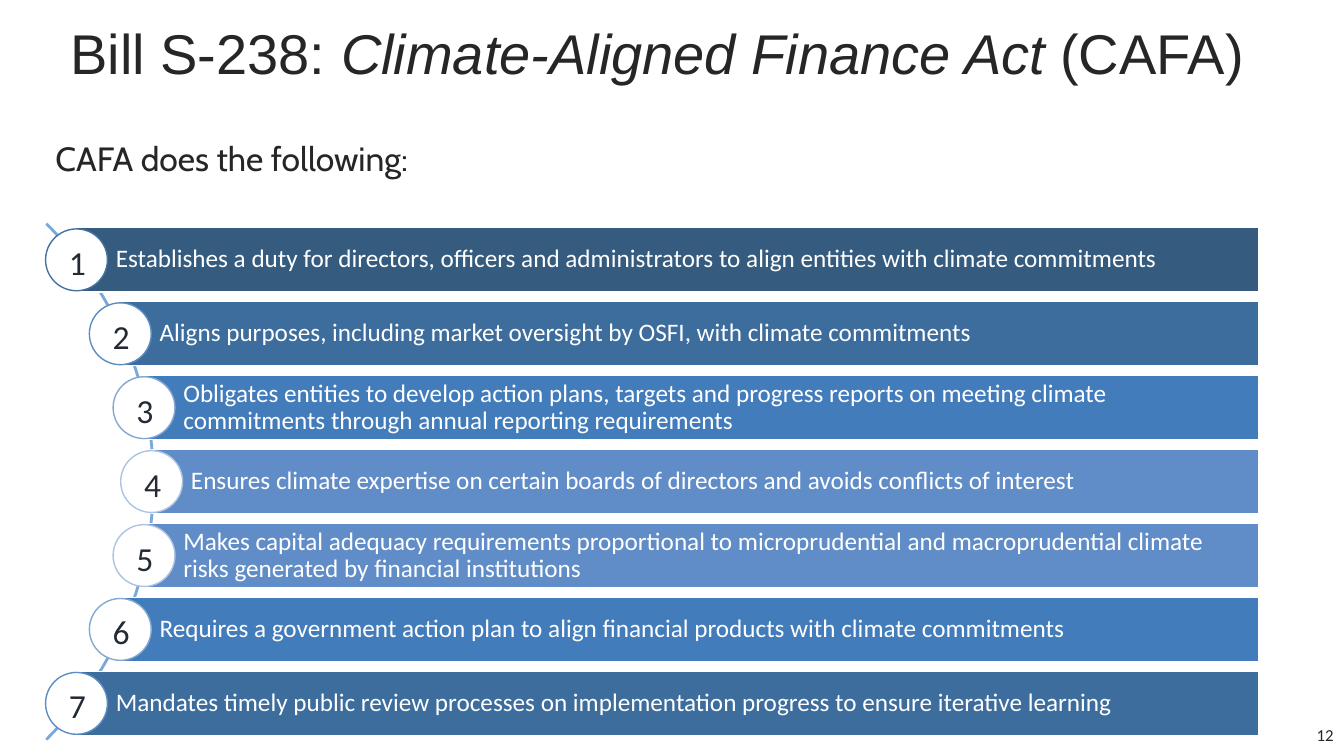
from math import sqrt

from lxml.etree import SubElement
from pptx import Presentation
from pptx.dml.color import RGBColor
from pptx.enum.shapes import MSO_SHAPE as Preset
from pptx.enum.text import MSO_ANCHOR as Anchor, MSO_AUTO_SIZE as AutoSize, PP_ALIGN as Align
from pptx.oxml.ns import qn
from pptx.util import Pt

WHITE = RGBColor(0xFF, 0xFF, 0xFF)
INK = RGBColor(0x26, 0x26, 0x26)
NUMBER_INK = RGBColor(0x22, 0x2A, 0x35)
ARC_BLUE = RGBColor(0x7A, 0xA9, 0xDA)
# Bar colours, each with the outline of its circle
NAVY = (RGBColor(0x35, 0x5C, 0x7F), RGBColor(0x43, 0x73, 0x9E))
STEEL = (RGBColor(0x3D, 0x6D, 0x9D), RGBColor(0x5D, 0x8D, 0xBE))
AZURE = (RGBColor(0x43, 0x7C, 0xBB), RGBColor(0x83, 0xA8, 0xD0))
SKY = (RGBColor(0x60, 0x8D, 0xC8), RGBColor(0xAC, 0xC4, 0xE2))

PROVISIONS = [
    ("Establishes a duty for directors, officers and administrators to align entities "
     "with climate commitments", NAVY),
    ("Aligns purposes, including market oversight by OSFI, with climate commitments", STEEL),
    ("Obligates entities to develop action plans, targets and progress reports on meeting "
     "climate commitments through annual reporting requirements", AZURE),
    ("Ensures climate expertise on certain boards of directors and avoids conflicts "
     "of interest", SKY),
    ("Makes capital adequacy requirements proportional to microprudential and "
     "macroprudential climate risks generated by financial institutions", SKY),
    ("Requires a government action plan to align financial products with climate "
     "commitments", AZURE),
    ("Mandates timely public review processes on implementation progress to ensure "
     "iterative learning", STEEL),
]

ARC_X, ARC_Y, ARC_RADIUS = -150.5, 344, 260.6
ROW_PITCH = 52.8
BAR_RIGHT, BAR_HEIGHT = 899.2, 45.8
CIRCLE_SIZE = 44.2
CIRCLE_INSET = 1.8


class SlideBuilder:
    def __init__(self, slide, font="Calibri"):
        self.slide = slide
        self.font = font

    def place(self, shape, left, top, width, height):
        shape.left, shape.top = Pt(left), Pt(top)
        shape.width, shape.height = Pt(width), Pt(height)

    def add_text(self, shape, runs, size, color, font=None, align=Align.LEFT,
                 anchor=Anchor.MIDDLE, insets=(7.2, 3.6, 7.2, 3.6), spacing=0.9):
        """Fill the shape with one paragraph of (text, italic) runs."""
        frame = shape.text_frame
        frame.word_wrap = True
        frame.auto_size = AutoSize.NONE
        frame.vertical_anchor = anchor
        (frame.margin_left, frame.margin_top,
         frame.margin_right, frame.margin_bottom) = map(Pt, insets)
        paragraph = frame.paragraphs[0]
        paragraph.alignment = align
        paragraph.line_spacing = spacing
        paragraph.space_before = Pt(0)
        for text, italic in runs:
            run = paragraph.add_run()
            run.text = text
            run.font.name = font or self.font
            run.font.size = Pt(size)
            run.font.italic = italic
            run.font.color.rgb = color
        return paragraph

    def title(self, box, runs):
        shape = self.slide.shapes.title
        self.place(shape, *box)
        self.add_text(shape, runs, 40, INK, "Arial")

    def body(self, box, text):
        shape = self.slide.placeholders[1]
        self.place(shape, *box)
        paragraph = self.add_text(shape, [(text, False)], 24, INK, "Cabin", anchor=Anchor.TOP)
        properties = paragraph._p.get_or_add_pPr()
        properties.set("marL", "0")
        properties.set("indent", "0")
        SubElement(properties, qn("a:buNone"))

    def page_number(self, box, text):
        shape = self.slide.shapes.add_textbox(*map(Pt, box))
        self.add_text(shape, [(text, False)], 12, INK, align=Align.RIGHT, spacing=1)

    def shape(self, preset, box, line, fill=None):
        shape = self.slide.shapes.add_shape(preset, *map(Pt, box))
        shape.shadow.inherit = False
        shape.line.color.rgb = line
        shape.line.width = Pt(1)
        if fill is None:
            shape.fill.background()
        else:
            shape.fill.solid()
            shape.fill.fore_color.rgb = fill
        return shape

    def arc(self):
        box = (ARC_X - ARC_RADIUS, ARC_Y - ARC_RADIUS, 2 * ARC_RADIUS, 2 * ARC_RADIUS)
        arc = self.shape(Preset.BLOCK_ARC, box, ARC_BLUE)
        for index, value in enumerate((189, 27, 0.002)):
            arc.adjustments[index] = value

    def provision(self, number, text, colors):
        """Draw a bar and its numbered circle, centred where the row meets the arc."""
        bar_color, outline = colors
        offset = (number - (len(PROVISIONS) + 1) / 2) * ROW_PITCH
        left = ARC_X - CIRCLE_INSET + sqrt(ARC_RADIUS ** 2 - offset ** 2)
        middle = ARC_Y + offset
        bar = self.shape(Preset.RECTANGLE,
                         (left, middle - BAR_HEIGHT / 2, BAR_RIGHT - left, BAR_HEIGHT),
                         WHITE, bar_color)
        self.add_text(bar, [(text, False)], 18, WHITE, insets=(28.1, 3.6, 3.6, 3.6))
        radius = CIRCLE_SIZE / 2
        circle = self.shape(Preset.OVAL,
                            (left - radius, middle - radius, CIRCLE_SIZE, CIRCLE_SIZE),
                            outline, WHITE)
        self.add_text(circle, [(str(number), False)], 24, NUMBER_INK, align=Align.CENTER,
                      insets=(1.4, 3, 0, 0), spacing=1)


def main():
    presentation = Presentation()
    presentation.slide_width, presentation.slide_height = Pt(960), Pt(540)
    slide = presentation.slides.add_slide(presentation.slide_layouts[1])
    builder = SlideBuilder(slide)
    builder.title((43.2, 2.9, 874, 74.9), [
        ("Bill S-238: ", False),
        ("Climate-Aligned Finance Act ", True),
        ("(CAFA)", False),
    ])
    builder.page_number((743.8, 510.5, 216, 28.8), "12")
    builder.body((32.4, 97.9, 879, 54), "CAFA does the following:")
    builder.arc()
    for number, (text, colors) in enumerate(PROVISIONS, start=1):
        builder.provision(number, text, colors)
    presentation.save("out.pptx")


if __name__ == "__main__":
    main()
